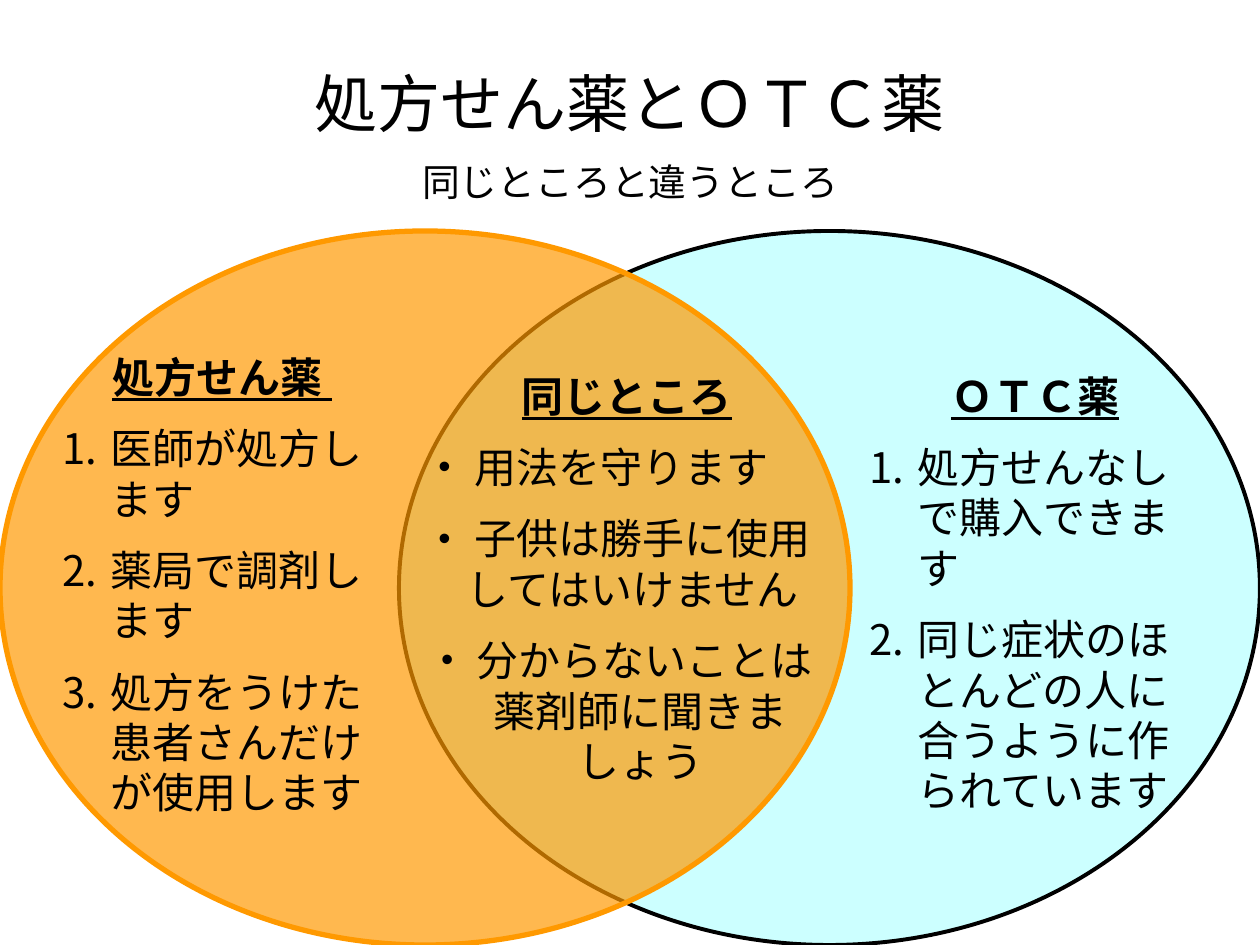
from lxml import etree
from pptx import Presentation, util as u
from pptx.dml.color import RGBColor
from pptx.enum import shapes, text
from pptx.oxml.ns import qn

PX = 914400 // 126
BLACK = RGBColor(0x00, 0x00, 0x00)
ORANGE = RGBColor(0xFF, 0x99, 0x00)
CYAN = RGBColor(0xCC, 0xFF, 0xFF)

NUMBER = ("a:buAutoNum", {"type": "arabicPeriod"})
BULLET = ("a:buChar", {"char": "•"})


def to_emu(box):
    return [v * PX for v in box]


def add_run(p, words, size, font="Arial", bold=False, underline=False):
    r = p.add_run()
    r.text = words
    r.font.size = u.Pt(size)
    r.font.name = font
    r.font.bold = bold
    r.font.underline = underline
    r.font.color.rgb = BLACK


def set_marker(p, marker, hang):
    """Give the paragraph a bullet or number in a hanging indent."""
    tag, attributes = marker
    pPr = p._p.get_or_add_pPr()
    pPr.set("marL", str(hang * PX))
    pPr.set("indent", str(-hang * PX))
    etree.SubElement(pPr, qn("a:buFont"), typeface="Arial")
    etree.SubElement(pPr, qn(tag), attributes)


def add_title(s, box, heading, subheading):
    title = s.shapes.title
    title.left, title.top, title.width, title.height = to_emu(box)
    tf = title.text_frame
    tf.auto_size = text.MSO_AUTO_SIZE.NONE
    tf.vertical_anchor = text.MSO_ANCHOR.MIDDLE
    lines = [(heading, 36, 0), (subheading, 21.6, 16)]
    for i, (words, size, gap) in enumerate(lines):
        p = tf.add_paragraph() if i else tf.paragraphs[0]
        p.alignment = text.PP_ALIGN.CENTER
        p.line_spacing = 0.8
        p.space_before = u.Pt(gap)
        add_run(p, words, size, "Calibri")


def add_circle(s, box, fill, line, width, opacity=100):
    sp = s.shapes.add_shape(shapes.MSO_SHAPE.OVAL, *to_emu(box))
    sp.shadow.inherit = False
    sp.fill.solid()
    sp.fill.fore_color.rgb = fill
    sp.line.color.rgb = line
    sp.line.width = u.Pt(width)
    if opacity < 100:
        color = sp.fill._xPr.find(qn("a:solidFill"))[0]
        etree.SubElement(color, qn("a:alpha"), val=str(opacity * 1000))


def add_list(s, box, heading, items, marker, hang, lead="", centered_last=False):
    """Add an underlined heading with a marked list; lead is a small run before each item."""
    tf = s.shapes.add_textbox(*to_emu(box)).text_frame
    tf.word_wrap = True
    p = tf.paragraphs[0]
    p.alignment = text.PP_ALIGN.CENTER
    add_run(p, heading, 24, bold=True, underline=True)
    for item in items:
        p = tf.add_paragraph()
        p.alignment = text.PP_ALIGN.LEFT
        p.space_before = u.Pt(12)
        set_marker(p, marker, hang)
        if lead:
            add_run(p, lead, 20)
        add_run(p, item, 24)
    if centered_last:
        p.alignment = text.PP_ALIGN.CENTER


def main():
    prs = Presentation()
    prs.slide_width, prs.slide_height = u.Inches(10), u.Inches(7.5)
    s = prs.slides.add_slide(prs.slide_layouts[5])

    add_title(s, (32, 63, 1196, 157), "処方せん薬とＯＴＣ薬", "同じところと違うところ")
    add_circle(s, (399, 231, 861, 714), CYAN, BLACK, 2.25)
    add_circle(s, (0, 231, 850, 714), ORANGE, ORANGE, 3, opacity=69)

    add_list(s, (50, 345, 344, 484), "処方せん薬 ",
             ["医師が処方します", "薬局で調剤します", "処方をうけた患者さんだけが使用します"],
             NUMBER, 48)
    add_list(s, (857, 364, 357, 445), "ＯＴＣ薬",
             ["処方せんなしで購入できます", "同じ症状のほとんどの人に合うように作られています"],
             NUMBER, 48)
    add_list(s, (426, 364, 402, 378), "同じところ",
             ["用法を守ります", "子供は勝手に使用してはいけません", "分からないことは薬剤師に聞きましょう"],
             BULLET, 28, lead=" ", centered_last=True)

    prs.save("out.pptx")


if __name__ == "__main__":
    main()
